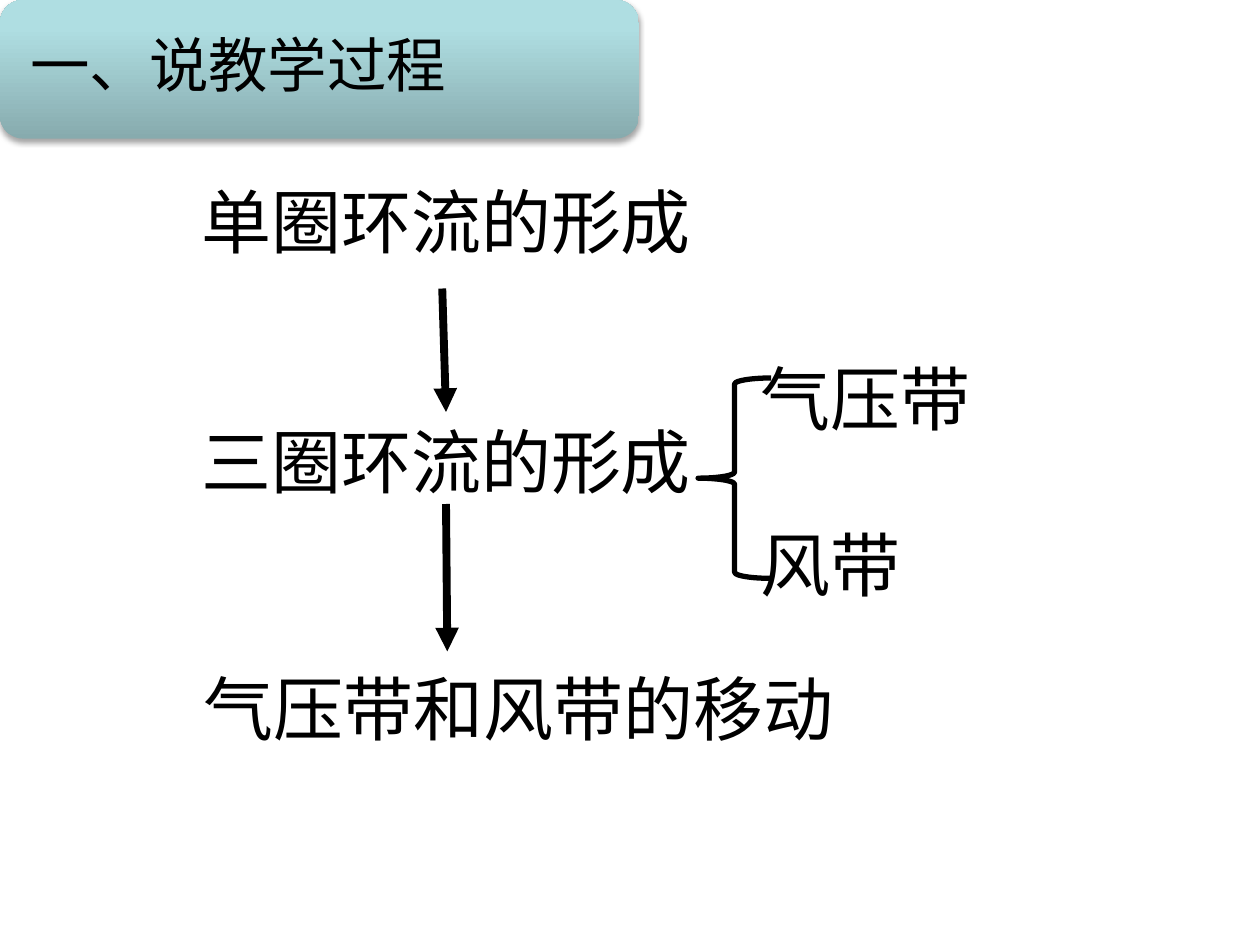
import copy

import pptx
import pptx.dml.color
import pptx.enum.shapes
import pptx.enum.text
import pptx.oxml
import pptx.oxml.ns
import pptx.util
from pptx.util import Inches

FONT = "Noto Sans CJK SC"
BLACK = "000000"


def rgb(value):
    return pptx.dml.color.RGBColor.from_string(value)


def write(frame, text, size=40, color=BLACK, line_spacing=None,
          fit=pptx.enum.text.MSO_AUTO_SIZE.SHAPE_TO_FIT_TEXT):
    frame.word_wrap = True
    frame.auto_size = fit
    paragraph = frame.paragraphs[0]
    paragraph.alignment = pptx.enum.text.PP_ALIGN.LEFT
    paragraph.line_spacing = line_spacing
    run = paragraph.add_run()
    run.text = text
    run.font.size = pptx.util.Pt(size)
    run.font.name = FONT
    run.font.color.rgb = rgb(color)
    east_asian = pptx.oxml.parse_xml(
        f'<a:ea {pptx.oxml.ns.nsdecls("a")} typeface="{FONT}"/>')
    run.font._element.append(east_asian)


presentation = pptx.Presentation()
presentation.slide_width = Inches(10)
presentation.slide_height = Inches(7.5)
slide = presentation.slides.add_slide(presentation.slide_layouts[5])
shapes = slide.shapes

# Heading banner, behind the title
banner = shapes.add_shape(pptx.enum.shapes.MSO_SHAPE.ROUNDED_RECTANGLE,
                          0, 0, Inches(5.07), Inches(1.1))
banner.line.fill.background()
banner.fill.gradient()
banner.fill.gradient_angle = 90
stop_list = banner.fill._xPr.find(".//" + pptx.oxml.ns.qn("a:gsLst"))
stop_list.append(copy.deepcopy(stop_list[-1]))
banner_stops = [(0, "87ABAE"), (0.8, "AFDEE2"), (1, "AFE0E4")]
for stop, (position, color) in zip(banner.fill.gradient_stops, banner_stops):
    stop.position = position
    stop.color.rgb = rgb(color)
banner.shadow.inherit = False
effects = banner._element.spPr.find(pptx.oxml.ns.qn("a:effectLst"))
effects.append(pptx.oxml.parse_xml(
    f'<a:outerShdw {pptx.oxml.ns.nsdecls("a")} blurRad="{pptx.util.Pt(3.1)}" '
    f'dist="{pptx.util.Pt(1.8)}" dir="5400000" rotWithShape="0">'
    f'<a:srgbClr val="{BLACK}"><a:alpha val="35000"/></a:srgbClr></a:outerShdw>'))

title = shapes.title
title._element.addprevious(banner._element)
title.left, title.top = Inches(0.05), Inches(0.05)
title.width, title.height = Inches(4.97), Inches(0.99)
title_frame = title.text_frame
title_frame.margin_left = title_frame.margin_right = Inches(0.19)
title_frame.margin_top = title_frame.margin_bottom = 0
title_frame.vertical_anchor = pptx.enum.text.MSO_ANCHOR.MIDDLE
write(title_frame, "一、说教学过程", size=34, line_spacing=0.9,
      fit=pptx.enum.text.MSO_AUTO_SIZE.NONE)

# Teaching steps and the two branches of the second step
topics = [
    ("单圈环流的形成", 1.5, 1.37, 4.98),
    ("三圈环流的形成", 1.5, 3.27, 4.62),
    ("气压带和风带的移动", 1.52, 5.23, 5.62),
    ("气压带", 5.94, 2.77, 2.94),
    ("风带", 5.94, 4.09, 2.94),
]
for text, left, top, width in topics:
    topic = shapes.add_textbox(Inches(left), Inches(top), Inches(width), Inches(0.77))
    write(topic.text_frame, text)

# Arrows from step to step
for ends in [(3.51, 2.29, 3.54, 3.27), (3.54, 4, 3.55, 5.17)]:
    arrow = shapes.add_connector(pptx.enum.shapes.MSO_CONNECTOR.STRAIGHT,
                                 *(Inches(end) for end in ends))
    arrow.line.color.rgb = rgb(BLACK)
    arrow.line.width = pptx.util.Pt(4.5)
    arrow.line._get_or_add_ln().append(pptx.oxml.parse_xml(
        f'<a:tailEnd {pptx.oxml.ns.nsdecls("a")} type="triangle"/>'))
    arrow._element.spPr.append(pptx.oxml.parse_xml(
        f'<a:effectLst {pptx.oxml.ns.nsdecls("a")}/>'))

brace = shapes.add_shape(pptx.enum.shapes.MSO_SHAPE.LEFT_BRACE,
                         Inches(5.54), Inches(3), Inches(0.58), Inches(1.59))
brace.fill.background()
brace.line.color.rgb = rgb(BLACK)
brace.line.width = pptx.util.Pt(3)
brace.shadow.inherit = False

presentation.save("out.pptx")
